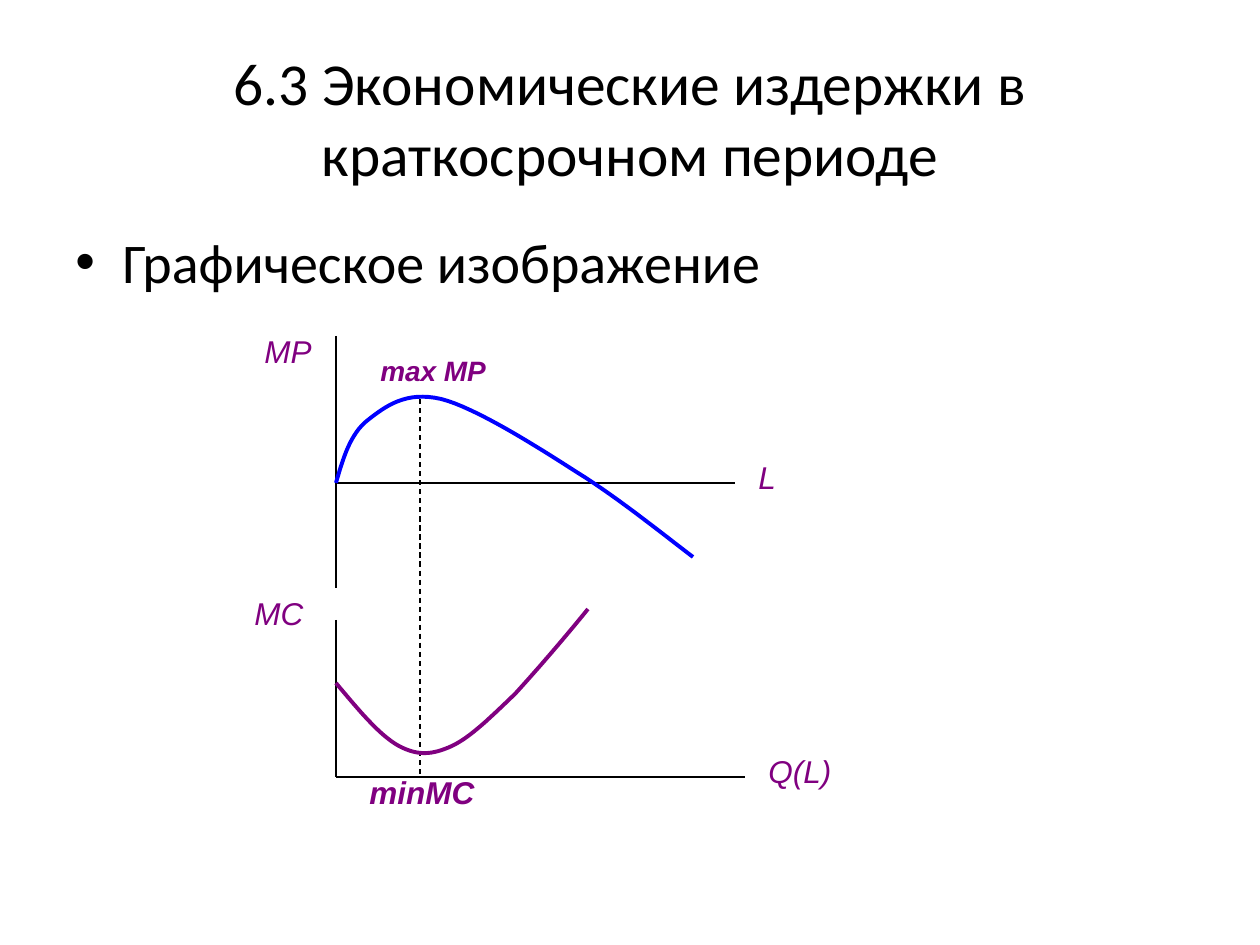
from lxml.etree import SubElement
from pptx import Presentation
from pptx.dml.color import RGBColor
from pptx.enum.dml import MSO_LINE_DASH_STYLE as Dash
from pptx.enum.shapes import MSO_CONNECTOR as Link
from pptx.enum.text import MSO_ANCHOR as Anchor, PP_ALIGN as Align
from pptx.oxml.ns import qn
from pptx.util import Emu, Pt

SCALE = 914400 / 126
BLACK = RGBColor(0, 0, 0)
BLUE = RGBColor(0, 0, 255)
PURPLE = RGBColor(128, 0, 128)
STEPS = 16


def px(n):
    return Emu(round(n * SCALE))


def add_text(slide, text, box, font="Arial", size=18, color=PURPLE, bold=False,
             italic=True, align=Align.LEFT, anchor=Anchor.TOP, bullet=None):
    frame = slide.shapes.add_textbox(*map(px, box)).text_frame
    frame.word_wrap = True
    frame.vertical_anchor = anchor
    para = frame.paragraphs[0]
    para.alignment = align
    run = para.add_run()
    run.text = text
    run.font.name = font
    run.font.size = Pt(size)
    run.font.bold = bold
    run.font.italic = italic
    run.font.color.rgb = color
    if bullet:
        props = para._p.get_or_add_pPr()
        props.set("marL", str(px(47)))
        props.set("indent", str(px(-47)))
        SubElement(props, qn("a:buFont"), typeface="Arial")
        SubElement(props, qn("a:buChar"), char=bullet)


def add_line(slide, start, end, width=1.5, dash=None):
    link = slide.shapes.add_connector(Link.STRAIGHT, *map(px, (*start, *end)))
    link.line.color.rgb = BLACK
    link.line.width = Pt(width)
    if dash:
        link.line.dash_style = dash
    SubElement(link._element.spPr, qn("a:effectLst"))


def bezier(a, b, c, d, t):
    s = 1 - t
    return tuple(s**3 * i + 3 * s * s * t * j + 3 * s * t * t * k + t**3 * m
                 for i, j, k, m in zip(a, b, c, d))


def add_curve(slide, left, top, knots, color):
    knots = [(left + x, top + y) for x, y in knots]
    points = [bezier(*knots[i:i + 4], n / STEPS)
              for i in range(0, len(knots) - 1, 3) for n in range(1, STEPS + 1)]
    pen = slide.shapes.build_freeform(*map(px, knots[0]))
    pen.add_line_segments([(px(x), px(y)) for x, y in points], close=False)
    curve = pen.convert_to_shape()
    curve.shadow.inherit = False
    curve.fill.background()
    curve.line.color.rgb = color
    curve.line.width = Pt(2.25)


def add_heading(slide, left, top, width):
    add_text(slide, "6.3 Экономические издержки в краткосрочном периоде",
             (left, top, width, 158), font="Calibri", size=34, color=BLACK,
             italic=False, align=Align.CENTER, anchor=Anchor.MIDDLE)
    add_text(slide, "Графическое изображение", (left, top + 183, width, 624),
             font="Calibri", size=32, color=BLACK, italic=False, bullet="•")


def add_graph(slide, left, top, width, height, base, knots, color, labels):
    add_line(slide, (left, top), (left, top + height))
    add_line(slide, (left, top + base), (left + width, top + base))
    add_curve(slide, left, top, knots, color)
    for text, (x, y, w, h), style in labels:
        add_text(slide, text, (left + x, top + y, w, h), **style)


def main():
    deck = Presentation()
    deck.slide_width, deck.slide_height = px(1260), px(945)
    slide = deck.slides.add_slide(deck.slide_layouts[6])
    add_heading(slide, 63, 38, 1134)
    add_graph(
        slide, 336, 336, 399, 252, 147,
        [(0, 147), (7, 123), (14, 98), (32, 84), (50, 70), (70, 55), (105, 63),
         (140, 72), (200, 110), (242, 137), (284, 163), (338, 207), (357, 221)],
        BLUE,
        [("MP", (-84, -10, 74, 50), {}),
         ("L", (410, 116, 84, 50), {}),
         ("max MP", (32, 11, 189, 46), {"size": 16, "bold": True})])
    add_line(slide, (420, 399), (420, 777), width=0.75, dash=Dash.DASH)
    add_graph(
        slide, 336, 620, 409, 157, 157,
        [(0, 63), (22, 89), (43, 115), (63, 126), (82, 136), (96, 135), (116, 126),
         (135, 117), (156, 96), (179, 74), (200, 51), (227, 20), (252, -11)],
        PURPLE,
        [("MC", (-94, -32, 84, 50), {}),
         ("Q(L)", (420, 126, 105, 50), {}),
         ("minMC", (21, 147, 158, 50), {"bold": True})])
    deck.save("out.pptx")


if __name__ == "__main__":
    main()
